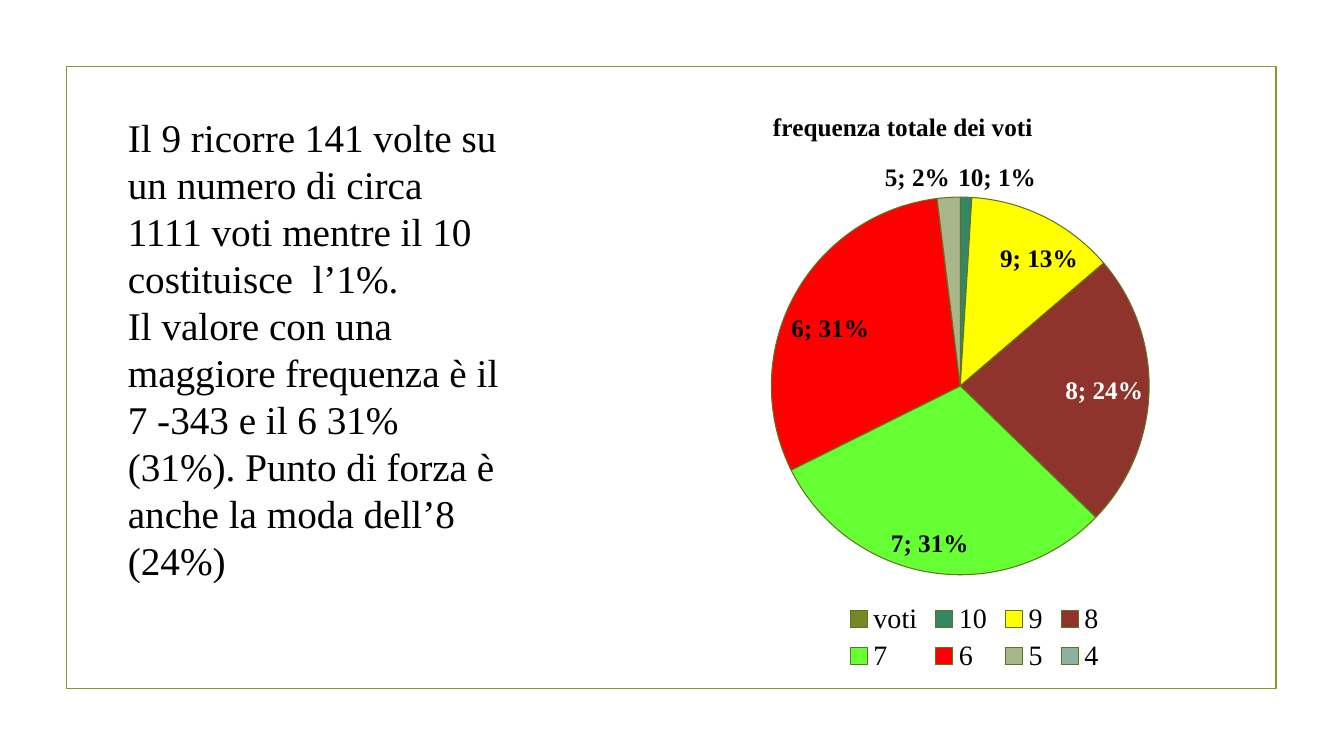
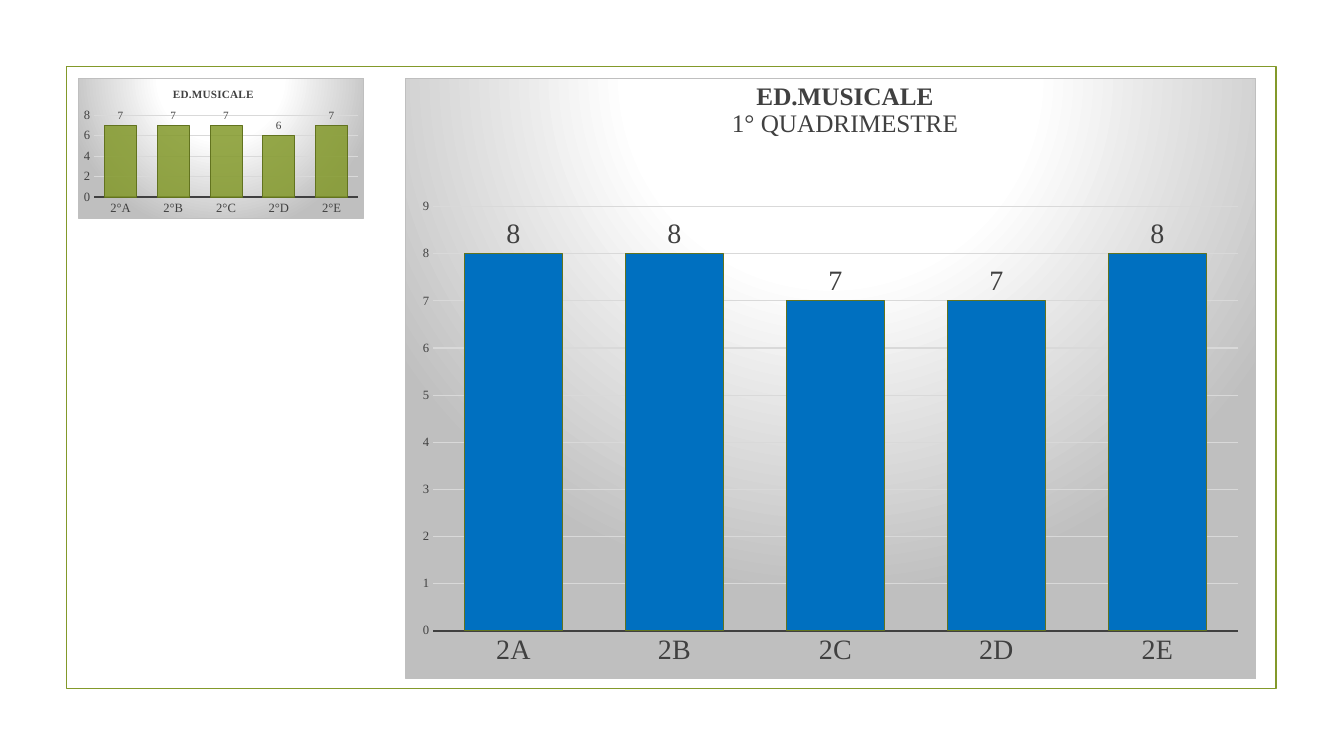
from lxml import etree
from pptx import Presentation, util as u
from pptx.chart.data import CategoryChartData
from pptx.dml.color import RGBColor
from pptx.enum import chart as ch, shapes
from pptx.oxml import parse_xml
from pptx.oxml.ns import nsdecls, qn


class Theme:
    font = "Times New Roman"
    black, white, gray = "000000", "FFFFFF", "404040"
    grid, border = "D9D9D9", "BFBFBF"
    olive, dark_olive, blue = "83992A", "62731F", "0070C0"
    slices = ["758825", "358664", "FFFF00", "8F342D",
              "66FF33", "FF0000", "A9B58A", "8DB0A3"]
    body, legend, heading, tick, small = 28, 20, 18, 9, 8


def style(font, size, color, bold=False):
    for key, value in dict(name=Theme.font, size=u.Pt(size), bold=bold).items():
        setattr(font, key, value)
    font.color.rgb = RGBColor.from_string(color)


def place(parent, index, inner=False, **box):
    """Fix a chart part at fractions of the chart area."""
    for old in parent.findall(qn("c:layout")):
        parent.remove(old)
    layout = parse_xml(f'<c:layout {nsdecls("c")}><c:manualLayout/></c:layout>')
    values = [("layoutTarget", "inner")] if inner else []
    values += [("xMode", "edge"), ("yMode", "edge"), *box.items()]
    for tag, value in values:
        etree.SubElement(layout[0], qn("c:" + tag)).set("val", str(value))
    parent.insert(index, layout)


prs = Presentation()
prs.slide_width, prs.slide_height = u.Inches(13.33), u.Inches(7.5)
blank = prs.slide_layouts[6]
s1, s2 = [prs.slides.add_slide(blank) for _ in range(2)]

# Shared frame, kept on the layout
frame = s1.shapes.add_shape(shapes.MSO_SHAPE.RECTANGLE, u.Inches(0.66),
                            u.Inches(0.66), u.Inches(12), u.Inches(6.17))
frame.shadow.inherit = False
frame.fill.background()
frame.line.color.rgb = RGBColor.from_string(Theme.olive)
frame.line.width = u.Pt(1.25)
blank.shapes.element.append(frame.element)

# Slide 1: comment on the marks
tf = s1.shapes.add_textbox(u.Inches(1.17), u.Inches(1.07),
                           u.Inches(3.94), u.Inches(4.81)).text_frame
tf.word_wrap = True
tf.text = ("Il 9 ricorre 141 volte su un numero di circa 1111 voti mentre il 10 "
           "costituisce  l’1%.\n"
           "Il valore con una maggiore frequenza è il 7 -343 e il 6 31% (31%). "
           "Punto di forza è anche la moda dell’8 (24%)")
for p in tf.paragraphs:
    style(p.runs[0].font, Theme.body, Theme.black)

# Slide 1: pie of all marks
data = CategoryChartData(number_format="0%")
data.categories = ["voti", "10", "9", "8", "7", "6", "5", "4"]
data.add_series("Series 1", [0, 0.01, 0.13, 0.24, 0.31, 0.31, 0.02, None])
pie = s1.shapes.add_chart(ch.XL_CHART_TYPE.PIE, u.Inches(7.11), u.Inches(0.91),
                          u.Inches(5.11), u.Inches(5.81), data).chart
style(pie.font, 10, Theme.black)
pie.has_title = True
title = pie.chart_title
title.text_frame.text = "frequenza totale dei voti"
style(title.text_frame.paragraphs[0].runs[0].font, Theme.heading, Theme.black, True)
place(title._element, 1, x=0.1, y=0.025)
place(pie.plots[0]._element.getparent(), 0, True, x=0.105, y=0.18, w=0.735, h=0.645)

pie.has_legend = True
pie.legend.position = ch.XL_LEGEND_POSITION.BOTTOM
pie.legend.include_in_layout = False
style(pie.legend.font, Theme.legend, Theme.black)

pie.plots[0].vary_by_categories = True
ser = pie.plots[0].series[0]
for i, color in enumerate(Theme.slices):
    fmt = ser.points[i].format
    fmt.fill.solid()
    fmt.fill.fore_color.rgb = RGBColor.from_string(color)
    fmt.line.color.rgb = RGBColor.from_string(Theme.dark_olive)
    fmt.line.width = u.Pt(0.75)

# Labels: thin slices outside, wide ones inside, each with a small shift
labels = ser.data_labels
labels.show_value = False
for leader in labels._element.findall(qn("c:showLeaderLines")):
    leader.set("val", "0")
shifts = [(0.06, 0), (0.07, 0.04), (0, 0), (-0.08, -0.015), (-0.015, 0.027), (-0.06, 0)]
for i, (dx, dy) in enumerate(shifts, 1):
    color = Theme.white if i == 3 else Theme.black
    pos = "outEnd" if i in (1, 6) else "inEnd"
    labels._element.insert(i - 1, parse_xml(
        f'<c:dLbl {nsdecls("c", "a")}><c:idx val="{i}"/>'
        f'<c:layout><c:manualLayout><c:x val="{dx}"/><c:y val="{dy}"/>'
        '</c:manualLayout></c:layout>'
        '<c:numFmt formatCode="0%" sourceLinked="0"/><c:spPr><a:noFill/></c:spPr>'
        f'<c:txPr><a:bodyPr/><a:p><a:pPr><a:defRPr sz="{Theme.heading * 100}" b="1">'
        f'<a:solidFill><a:srgbClr val="{color}"/></a:solidFill>'
        f'<a:latin typeface="{Theme.font}"/></a:defRPr></a:pPr></a:p></c:txPr>'
        f'<c:dLblPos val="{pos}"/><c:showLegendKey val="0"/><c:showVal val="1"/>'
        '<c:showCatName val="1"/><c:showSerName val="0"/><c:showPercent val="0"/>'
        '<c:showBubbleSize val="0"/><c:separator>; </c:separator></c:dLbl>'))

# Slide 2: music marks by class, large and small chart
columns = [
    dict(at=(4.02, 0.77, 8.44, 5.97), name="Series 1", cats="2", vals=(8, 8, 7, 7, 8),
         title=["ED.MUSICALE", "1° QUADRIMESTRE"], title_size=Theme.heading,
         title_at=dict(x=0.38, y=0), plot=dict(x=0.032, y=0.214, w=0.947, h=0.706),
         text=Theme.legend, top=9, step=1, color=Theme.blue, alpha=100,
         label=Theme.legend),
    dict(at=(0.77, 0.77, 2.84, 1.4), name="ED.MUSICALE", cats="2°", vals=(7, 7, 7, 6, 7),
         title=["ED.MUSICALE"], title_size=Theme.small,
         title_at=dict(x=0.325, y=0.05), plot=dict(x=0.056, y=0.265, w=0.925, h=0.585),
         text=Theme.tick, top=8, step=2, color=Theme.olive, alpha=85,
         label=Theme.small),
]
for c in columns:
    data = CategoryChartData(number_format="0")
    data.categories = [c["cats"] + letter for letter in "ABCDE"]
    data.add_series(c["name"], c["vals"])
    chart = s2.shapes.add_chart(ch.XL_CHART_TYPE.COLUMN_CLUSTERED,
                                *map(u.Inches, c["at"]), data).chart
    style(chart.font, 10, Theme.black)
    chart.has_legend = False

    # Title, first line bold
    chart.has_title = True
    tf = chart.chart_title.text_frame
    for i, line in enumerate(c["title"]):
        p = tf.add_paragraph() if i else tf.paragraphs[0]
        r = p.add_run()
        r.text = line
        style(r.font, c["title_size"], Theme.gray, i == 0)
    place(chart.chart_title._element, 1, **c["title_at"])

    # Gradient background and border
    stops = "".join(f'<a:gs pos="{pos}000"><a:srgbClr val="{color}"/></a:gs>' for pos, color
                    in [(0, Theme.white), (39, Theme.white), (100, Theme.border)])
    chart._chartSpace.find(qn("c:chart")).addnext(parse_xml(
        f'<c:spPr {nsdecls("c", "a")}><a:gradFill><a:gsLst>{stops}</a:gsLst>'
        '<a:path path="circle"><a:fillToRect l="50000" t="-80000" r="50000" b="180000"/>'
        '</a:path></a:gradFill><a:ln w="9525"><a:solidFill>'
        f'<a:srgbClr val="{Theme.border}"/></a:solidFill></a:ln></c:spPr>'))

    # Axes
    cat, val = chart.category_axis, chart.value_axis
    for axis, size in [(cat, c["text"]), (val, Theme.tick)]:
        axis.major_tick_mark = axis.minor_tick_mark = ch.XL_TICK_MARK.NONE
        style(axis.tick_labels.font, size, Theme.gray)
    cat.format.line.color.rgb = RGBColor.from_string(Theme.gray)
    cat.format.line.width = u.Pt(1.5)
    val.format.line.fill.background()
    val.minimum_scale, val.maximum_scale, val.major_unit = 0, c["top"], c["step"]
    val.has_major_gridlines = True
    val.major_gridlines.format.line.color.rgb = RGBColor.from_string(Theme.grid)
    val.major_gridlines.format.line.width = u.Pt(0.75)

    # Columns and their values
    plot = chart.plots[0]
    place(plot._element.getparent(), 0, True, **c["plot"])
    plot.gap_width, plot.vary_by_categories = 65, False
    ser = plot.series[0]
    ser.format.fill.solid()
    ser.format.fill.fore_color.rgb = RGBColor.from_string(c["color"])
    if c["alpha"] < 100:
        rgb = ser._element.find(".//" + qn("a:srgbClr"))
        etree.SubElement(rgb, qn("a:alpha")).set("val", str(c["alpha"] * 1000))
    ser.format.line.color.rgb = RGBColor.from_string(Theme.dark_olive)
    ser.format.line.width = u.Pt(0.75)
    labels = ser.data_labels
    labels.show_value = True
    labels.position = ch.XL_LABEL_POSITION.OUTSIDE_END
    style(labels.font, c["label"], Theme.gray)

prs.save("out.pptx")
